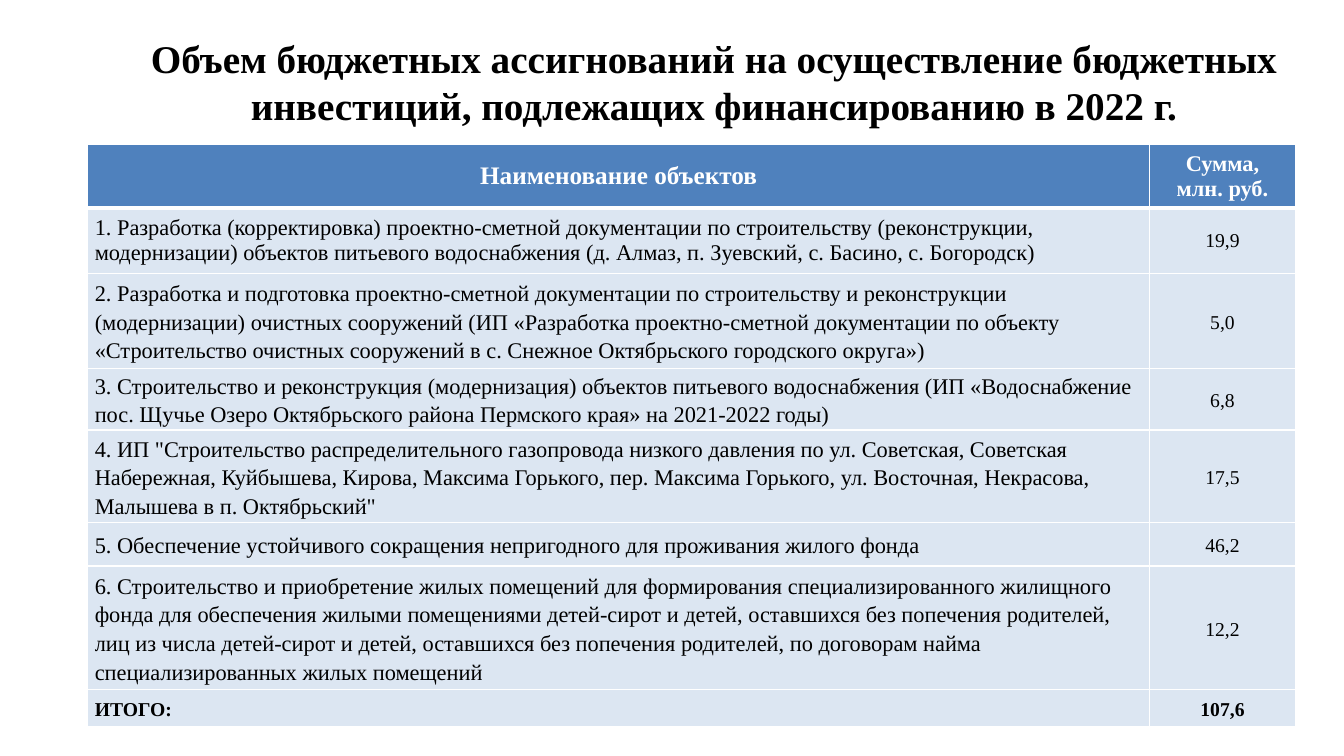
from dataclasses import dataclass

from lxml import etree
from pptx import Presentation
from pptx import util as u
from pptx.dml.color import RGBColor
from pptx.enum import text
from pptx.oxml import ns

TITLE = ("Объем бюджетных ассигнований на осуществление бюджетных "
         "инвестиций, подлежащих финансированию в 2022 г.")
HEADINGS = ("Наименование объектов", "Сумма, млн. руб.")
PROJECTS = [
    ("1. Разработка (корректировка) проектно-сметной документации по строительству "
     "(реконструкции, модернизации) объектов питьевого водоснабжения "
     "(д. Алмаз, п. Зуевский, с. Басино, с. Богородск)", "19,9"),
    ("2. Разработка и подготовка проектно-сметной документации по строительству и "
     "реконструкции (модернизации) очистных сооружений (ИП «Разработка "
     "проектно-сметной документации по объекту «Строительство очистных сооружений "
     "в с. Снежное Октябрьского городского округа»)", "5,0"),
    ("3. Строительство и реконструкция (модернизация) объектов питьевого "
     "водоснабжения (ИП «Водоснабжение пос. Щучье Озеро Октябрьского района "
     "Пермского края» на 2021-2022 годы)", "6,8"),
    ("4. ИП \"Строительство распределительного газопровода низкого давления по "
     "ул. Советская, Советская Набережная, Куйбышева, Кирова, Максима Горького, "
     "пер. Максима Горького, ул. Восточная, Некрасова, Малышева "
     "в п. Октябрьский\"", "17,5"),
    ("5. Обеспечение устойчивого сокращения непригодного для проживания "
     "жилого фонда", "46,2"),
    ("6. Строительство и приобретение жилых помещений для формирования "
     "специализированного жилищного фонда для обеспечения жилыми помещениями "
     "детей-сирот и детей, оставшихся без попечения родителей, лиц из числа "
     "детей-сирот и детей, оставшихся без попечения родителей, по договорам найма "
     "специализированных жилых помещений", "12,2"),
]
TOTAL = ("ИТОГО:", "107,6")
COLUMN_WIDTHS = (10.53, 1.45)
ROW_HEIGHTS = (0.58, 0.65, 0.94, 0.57, 0.86, 0.43, 1.14, 0.37)


@dataclass(frozen=True)
class Theme:
    font: str = "Times New Roman"
    ink: str = "000000"
    white: str = "FFFFFF"
    header: str = "4F81BD"
    band: str = "DCE6F2"
    title_size: int = 28
    heading_size: int = 18
    body_size: int = 16
    sum_size: int = 14
    thin: int = 1
    thick: int = 3


THEME = Theme()


def write(frame, words, size, color=THEME.ink, bold=False, centered=True, spacing=1.0):
    frame.word_wrap = True
    para = frame.paragraphs[0]
    para.alignment = text.PP_ALIGN.CENTER if centered else text.PP_ALIGN.LEFT
    para.line_spacing = spacing
    span = para.add_run()
    span.text = words
    span.font.name = THEME.font
    span.font.size = u.Pt(size)
    span.font.bold = bold
    span.font.color.rgb = RGBColor.from_string(color)


def style_cell(cell, fill, margins, top, bottom):
    cell.vertical_anchor = text.MSO_ANCHOR.MIDDLE
    side, edge = (u.Inches(margin) for margin in margins)
    cell.margin_left = cell.margin_right = side
    cell.margin_top = cell.margin_bottom = edge
    properties = cell._tc.get_or_add_tcPr()
    borders = {"L": THEME.thin, "R": THEME.thin, "T": top, "B": bottom}
    for name, width in borders.items():
        line = etree.SubElement(properties, ns.qn(f"a:ln{name}"), w=str(u.Pt(width)))
        solid = etree.SubElement(line, ns.qn("a:solidFill"))
        etree.SubElement(solid, ns.qn("a:srgbClr"), val=THEME.white)
    cell.fill.solid()
    cell.fill.fore_color.rgb = RGBColor.from_string(fill)


def add_title(page):
    box = page.shapes.add_textbox(*map(u.Inches, (1.08, 0.18, 12, 1.25)))
    box.text_frame.vertical_anchor = text.MSO_ANCHOR.MIDDLE
    write(box.text_frame, TITLE, THEME.title_size, bold=True)


def add_budget_table(page):
    rows = [HEADINGS, *PROJECTS, TOTAL]
    area = (0.87, 1.43, sum(COLUMN_WIDTHS), sum(ROW_HEIGHTS))
    table = page.shapes.add_table(len(rows), len(HEADINGS), *map(u.Inches, area)).table
    for column, width in zip(table.columns, COLUMN_WIDTHS):
        column.width = u.Inches(width)
    for row, height in zip(table.rows, ROW_HEIGHTS):
        row.height = u.Inches(height)
    last = len(rows) - 1
    for index, entries in enumerate(rows):
        heading, total = index == 0, index == last
        for column, words in enumerate(entries):
            is_sum = column == 1
            if heading:
                size = THEME.body_size if is_sum else THEME.heading_size
            else:
                size = THEME.sum_size if is_sum or total else THEME.body_size
            cell = table.cell(index, column)
            style_cell(cell, THEME.header if heading else THEME.band,
                       (0.13, 0.05) if heading else (0.07, 0),
                       top=THEME.thick if index == 1 else THEME.thin,
                       bottom=THEME.thick if heading else THEME.thin)
            write(cell.text_frame, words, size,
                  color=THEME.white if heading else THEME.ink,
                  bold=heading or total, centered=heading or is_sum,
                  spacing=1.15 if index > 1 else 1.0)


def main():
    deck = Presentation()
    deck.slide_width, deck.slide_height = u.Inches(13.33), u.Inches(7.5)
    page = deck.slides.add_slide(deck.slide_layouts[6])
    add_title(page)
    add_budget_table(page)
    deck.save("out.pptx")


if __name__ == "__main__":
    main()
